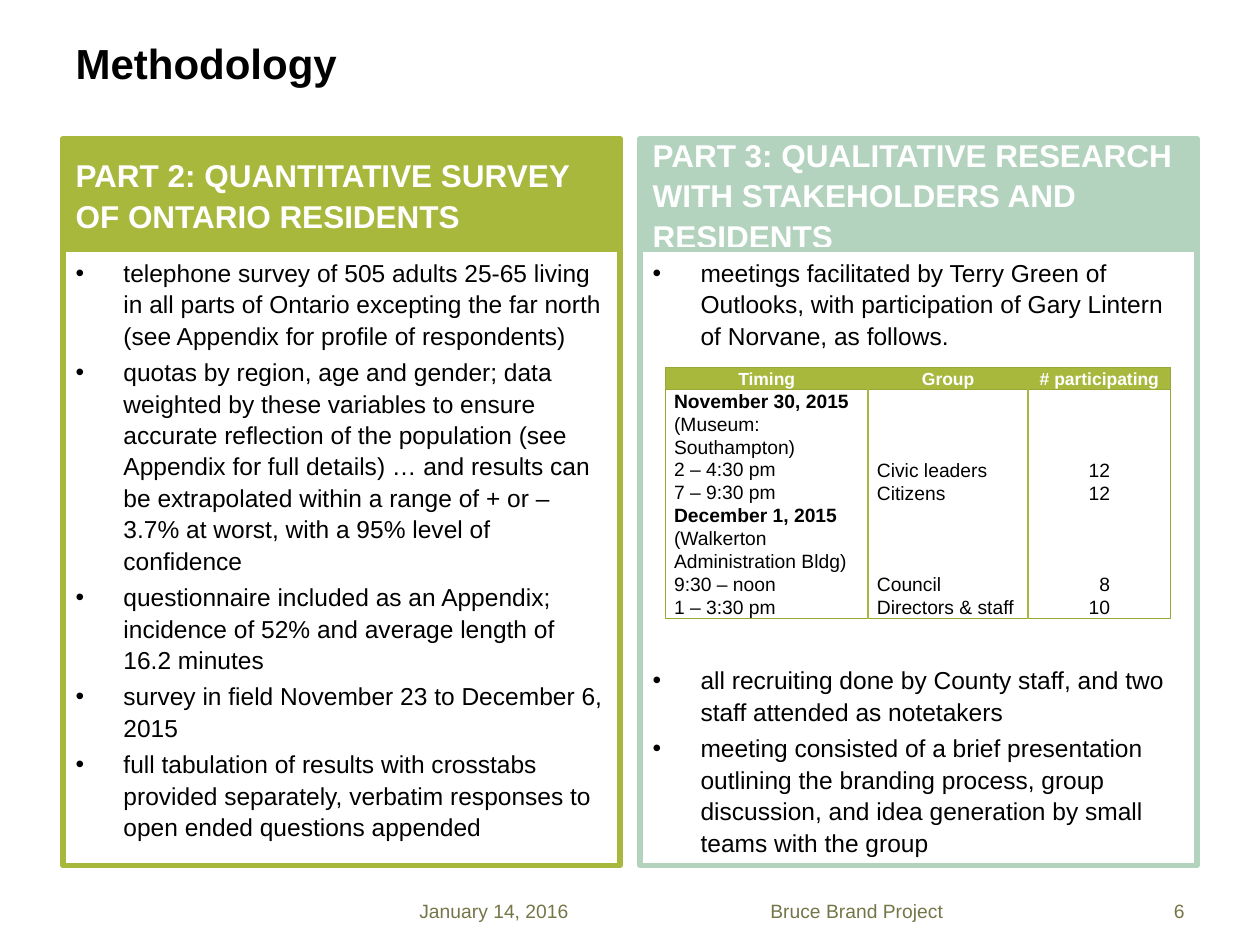
from lxml import etree
from pptx import Presentation
from pptx.dml.color import RGBColor
from pptx.enum.text import MSO_ANCHOR, MSO_AUTO_SIZE, PP_ALIGN
from pptx.oxml.ns import qn
from pptx.util import Inches, Pt

LEFT, CENTER, RIGHT = PP_ALIGN.LEFT, PP_ALIGN.CENTER, PP_ALIGN.RIGHT
TOP, MIDDLE = MSO_ANCHOR.TOP, MSO_ANCHOR.MIDDLE
NO_AUTOFIT = MSO_AUTO_SIZE.NONE

BLACK = RGBColor(0x00, 0x00, 0x00)
WHITE = RGBColor(0xFF, 0xFF, 0xFF)
LIME = RGBColor(0xA7, 0xB8, 0x3C)
DARK_LIME = RGBColor(0x98, 0xA7, 0x36)
SAGE = RGBColor(0xB3, 0xD3, 0xBF)
OLIVE = RGBColor(0x75, 0x76, 0x48)

FONT = "Arial"
LINE_SPACING = 1.07
BULLET_GAP = 2.8  # points
TABLE_GAP = 179   # points left in the list for the table
NO_STYLE = "{2D5ABB26-0587-4C30-8999-92F81FD0307C}"

# Each part: heading, colour, bullets as (space before in points, text)
PARTS = [
    ("PART 2: QUANTITATIVE SURVEY OF ONTARIO RESIDENTS", LIME, [
        (0, "telephone survey of 505 adults 25-65 living in all parts of Ontario "
            "excepting the far north (see Appendix for profile of respondents)"),
        (BULLET_GAP, "quotas by region, age and gender; data weighted by these "
                     "variables to ensure accurate reflection of the population "
                     "(see Appendix for full details) … and results can be "
                     "extrapolated within a range of + or – 3.7% at worst, with "
                     "a 95% level of confidence"),
        (BULLET_GAP, "questionnaire included as an Appendix; incidence of 52% and "
                     "average length of 16.2 minutes"),
        (BULLET_GAP, "survey in field November 23 to December 6, 2015"),
        (BULLET_GAP, "full tabulation of results with crosstabs provided "
                     "separately, verbatim responses to open ended questions "
                     "appended"),
    ]),
    ("PART 3: QUALITATIVE RESEARCH WITH STAKEHOLDERS AND RESIDENTS", SAGE, [
        (0, "meetings facilitated by Terry Green of Outlooks, with participation "
            "of Gary Lintern of Norvane, as follows."),
        (TABLE_GAP, "all recruiting done by County staff, and two staff attended "
                    "as notetakers"),
        (BULLET_GAP, "meeting consisted of a brief presentation outlining the "
                     "branding process, group discussion, and idea generation by "
                     "small teams with the group"),
    ]),
]

# Each column: title, width, alignment, right margin, lines
MEETING_COLUMNS = [
    ("Timing", 1.61, LEFT, 0.07,
     ["November 30, 2015", "(Museum: Southampton)", "2 – 4:30 pm", "7 – 9:30 pm",
      "December 1, 2015", "(Walkerton Administration Bldg)", "9:30 – noon",
      "1 – 3:30 pm"]),
    ("Group", 1.27, LEFT, 0.07,
     ["Civic leaders", "Citizens", "Council", "Directors & staff"]),
    ("# participating", 1.13, RIGHT, 0.48, ["12", "12", "8", "10"]),
]
MEETING_DATES = ("November 30, 2015", "December 1, 2015")
SECOND_DAY = "Council", "8"
DATE_LINES = 39.4  # points: the three lines a date and place take

FOOTERS = [
    ("January 14, 2016", 3.23, 1.75, LEFT),
    ("Bruce Brand Project", 4.99, 3.62, CENTER),
    ("6", 8.62, 0.88, RIGHT),
]


def place(shape, left, top, width, height):
    shape.left, shape.top = Inches(left), Inches(top)
    shape.width, shape.height = Inches(width), Inches(height)


def write(frame, lines, size, color, bold=False, align=LEFT, spacing=None):
    """Fill a text frame with (space before, text) lines and return its paragraphs."""
    for i, (before, text) in enumerate(lines):
        paragraph = frame.paragraphs[0] if i == 0 else frame.add_paragraph()
        paragraph.text = text
        paragraph.alignment = align
        paragraph.space_before = Pt(before)
        if spacing:
            paragraph.line_spacing = spacing
        font = paragraph.font
        font.name, font.size, font.bold = FONT, Pt(size), bold
        font.color.rgb = color
    return frame.paragraphs


def set_up_frame(frame, anchor):
    frame.word_wrap = True
    frame.auto_size = NO_AUTOFIT
    frame.vertical_anchor = anchor


def outline(shape, color):
    shape.line.color.rgb = color
    shape.line.width = Pt(3)


def add_borders(cell, **sides):
    """Draw the cell sides given as L, R, T, B, each a (colour, points) pair."""
    properties = cell._tc.get_or_add_tcPr()
    for side in "LRTB":
        if side in sides:
            color, points = sides[side]
            line = etree.SubElement(properties, qn(f"a:ln{side}"), w=str(Pt(points)))
            fill = etree.SubElement(line, qn("a:solidFill"))
            etree.SubElement(fill, qn("a:srgbClr"), val=str(color))


def add_part(heading_box, list_box, left, heading, color, bullets):
    place(heading_box, left, 1.1, 4.42, 0.88)
    heading_box.fill.solid()
    heading_box.fill.fore_color.rgb = color
    outline(heading_box, color)
    set_up_frame(heading_box.text_frame, MIDDLE)
    write(heading_box.text_frame, [(0, heading)], 18, WHITE, True,
          spacing=LINE_SPACING)

    place(list_box, left, 1.98, 4.42, 4.89)
    outline(list_box, color)
    set_up_frame(list_box.text_frame, TOP)
    for paragraph in write(list_box.text_frame, bullets, 14, BLACK,
                           spacing=LINE_SPACING):
        properties = paragraph._p.get_or_add_pPr()
        properties.set("marL", str(Inches(0.38)))
        properties.set("indent", str(-Inches(0.38)))


def add_meetings(slide):
    table = slide.shapes.add_table(2, len(MEETING_COLUMNS), Inches(5.28),
                                   Inches(2.92), Inches(4.01), Inches(1.98)).table
    table._tbl.tblPr.find(qn("a:tableStyleId")).text = NO_STYLE
    table.rows[0].height, table.rows[1].height = Inches(0.17), Inches(1.81)
    edge, divider = (DARK_LIME, 0.75), (LIME, 1)
    last = len(MEETING_COLUMNS) - 1

    for i, (title, width, align, right_margin, lines) in enumerate(MEETING_COLUMNS):
        table.columns[i].width = Inches(width)
        header, body = table.cell(0, i), table.cell(1, i)
        for cell in (header, body):
            cell.margin_left = cell.margin_right = Inches(0.07)
            cell.margin_top = cell.margin_bottom = 0

        outer = {"L": edge} if i == 0 else {"R": edge} if i == last else {}
        add_borders(header, T=edge, B=edge, **outer)
        header.fill.solid()
        header.fill.fore_color.rgb = LIME
        write(header.text_frame, [(0, title)], 10, WHITE, True, CENTER, LINE_SPACING)

        add_borders(body, T=edge, B=edge, L=edge if i == 0 else divider,
                    R=edge if i == last else divider)
        body.fill.background()
        body.margin_right = Inches(right_margin)
        if i > 0:
            body.margin_top = Pt(DATE_LINES)
        spaced = [(DATE_LINES if line in SECOND_DAY else 0, line) for line in lines]
        for paragraph in write(body.text_frame, spaced, 11, BLACK, False, align,
                               LINE_SPACING):
            paragraph.font.bold = paragraph.text in MEETING_DATES


def main():
    prs = Presentation()
    prs.slide_width, prs.slide_height = Inches(10), Inches(7.5)
    slide = prs.slides.add_slide(prs.slide_layouts.get_by_name("Comparison"))

    title, *boxes = slide.placeholders
    place(title, 0.5, 0.24, 6.67, 0.52)
    set_up_frame(title.text_frame, MIDDLE)
    write(title.text_frame, [(0, "Methodology")], 24, BLACK, True)

    for i, part in enumerate(PARTS):
        add_part(*boxes[2 * i:2 * i + 2], 0.5 + i * 4.58, *part)

    for text, left, width, align in FOOTERS:
        footer = slide.shapes.add_textbox(Inches(left), Inches(7.09),
                                          Inches(width), Inches(0.28))
        set_up_frame(footer.text_frame, MIDDLE)
        write(footer.text_frame, [(0, text)], 11, OLIVE, align=align)

    add_meetings(slide)
    prs.save("out.pptx")


if __name__ == "__main__":
    main()
